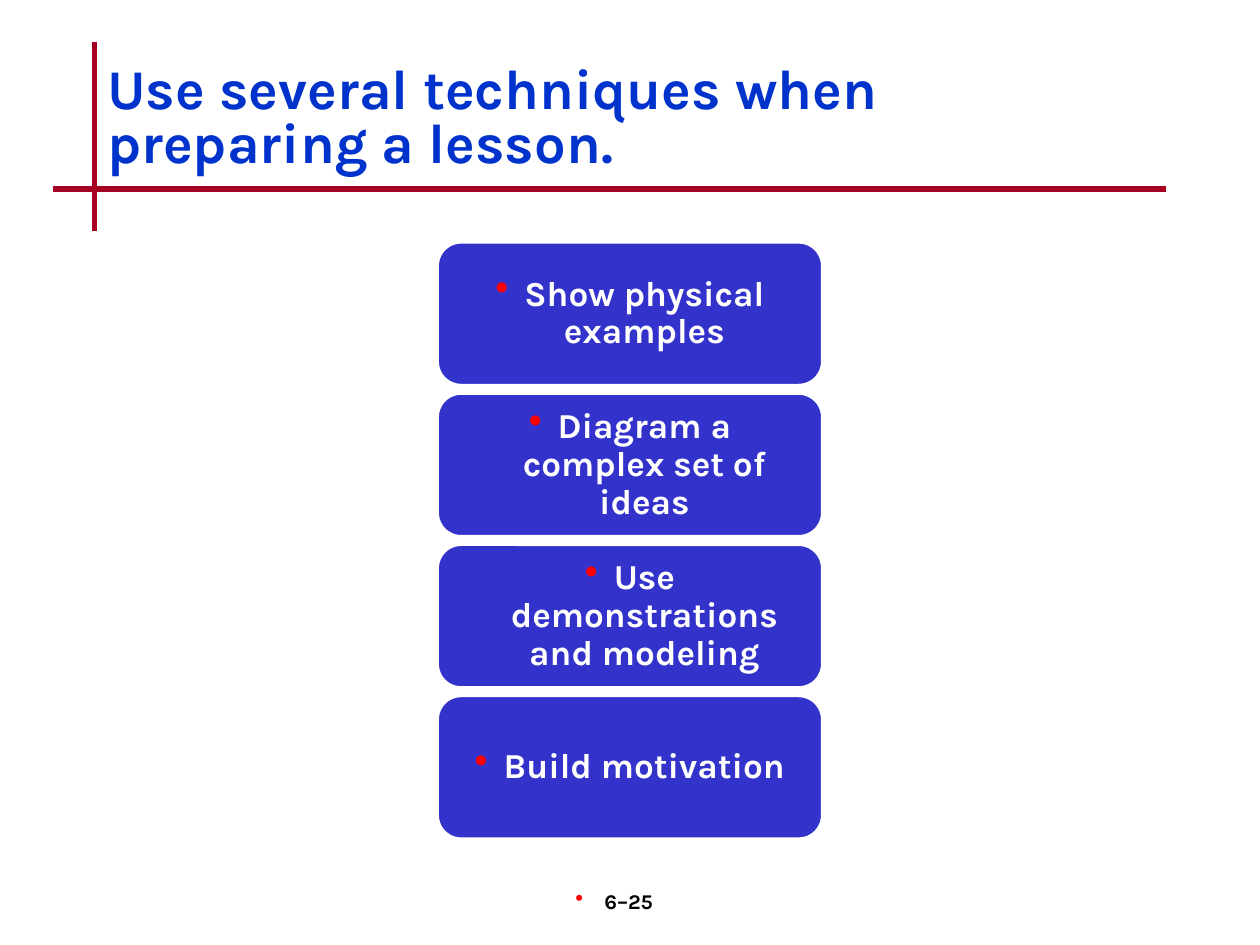
from pptx import Presentation
from pptx.dml.color import RGBColor
from pptx.enum.shapes import MSO_CONNECTOR, MSO_SHAPE
from pptx.enum.text import MSO_ANCHOR, PP_ALIGN
from pptx.oxml.ns import qn
from pptx.util import Inches, Pt
from lxml.etree import SubElement

FONT = "Karla"
WHITE = RGBColor(0xFF, 0xFF, 0xFF)
BLACK = RGBColor(0, 0, 0)
BLUE = RGBColor(0x00, 0x33, 0xCC)
INDIGO = RGBColor(0x33, 0x33, 0xCC)
MAROON = RGBColor(0xA5, 0x00, 0x21)


def style(para, size, color):
    para.font.name = FONT
    para.font.size = Pt(size)
    para.font.bold = True
    para.font.color.rgb = color


def add_bullet(para):
    """Give the paragraph a red hanging bullet."""
    props = para._p.get_or_add_pPr()
    props.set("marL", str(Inches(0.23)))
    props.set("indent", str(-Inches(0.23)))
    tint = SubElement(props, qn("a:buClr"))
    SubElement(tint, qn("a:srgbClr"), val="FF0000")
    SubElement(props, qn("a:buSzPct"), val="110000")
    SubElement(props, qn("a:buChar"), char="•")


prs = Presentation()
prs.slide_width, prs.slide_height = Inches(10), Inches(7.5)
slide = prs.slides.add_slide(prs.slide_layouts[5])
shapes = slide.shapes

# Title
title = shapes.title
title.left, title.top = Inches(0.75), Inches(0.33)
title.width, title.height = Inches(8.5), Inches(1.25)
title.text_frame.text = "Use several techniques when preparing a lesson."
title.text_frame.vertical_anchor = MSO_ANCHOR.MIDDLE
para = title.text_frame.paragraphs[0]
para.alignment = PP_ALIGN.LEFT
para.line_spacing = 0.8
style(para, 32, BLUE)

# Crossed rules beside and under the title
for ends in [(0.75, 0.33, 0.75, 1.83), (0.42, 1.5, 9.25, 1.5)]:
    rule = shapes.add_connector(MSO_CONNECTOR.STRAIGHT, *map(Inches, ends))
    rule.line.color.rgb = MAROON
    rule.line.width = Pt(3)
    SubElement(rule._element.spPr, qn("a:effectLst"))

# Stack of technique cards
cards = [
    "Show physical examples",
    "Diagram a complex set of ideas",
    "Use demonstrations and modeling",
    "Build motivation",
]
for i, text in enumerate(cards):
    card = shapes.add_shape(MSO_SHAPE.ROUNDED_RECTANGLE, Inches(3.47),
                            Inches(1.92 + 1.2 * i), Inches(3.06), Inches(1.14))
    card.shadow.inherit = False
    card.fill.solid()
    card.fill.fore_color.rgb = INDIGO
    card.line.color.rgb = WHITE
    card.line.width = Pt(2)
    frame = card.text_frame
    frame.word_wrap = True
    frame.vertical_anchor = MSO_ANCHOR.MIDDLE
    frame.margin_left = frame.margin_right = Inches(0.08)
    frame.margin_top = frame.margin_bottom = Inches(0.04)
    frame.text = text
    para = frame.paragraphs[0]
    para.alignment = PP_ALIGN.CENTER
    para.line_spacing = 0.9
    add_bullet(para)
    style(para, 20, WHITE)

# Page number
footer = shapes.add_textbox(Inches(3.92), Inches(7), Inches(2.08), Inches(0.5))
frame = footer.text_frame
frame.word_wrap = True
frame.margin_right = Inches(0.27)
frame.text = "6–25"
para = frame.paragraphs[0]
para.alignment = PP_ALIGN.CENTER
add_bullet(para)
style(para, 12, BLACK)

prs.save("out.pptx")
